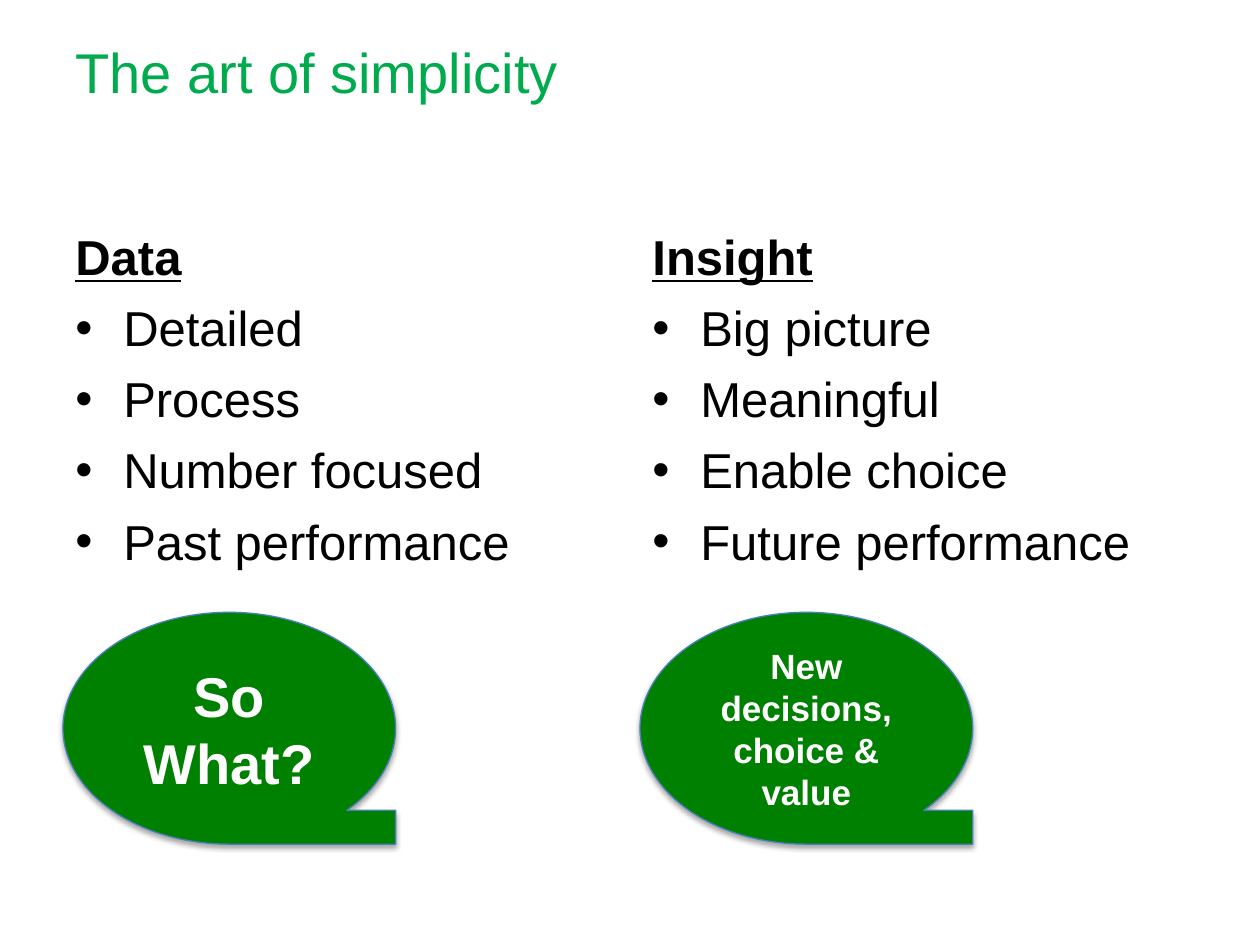
from lxml.etree import SubElement
from pptx import Presentation
from pptx.dml.color import RGBColor
from pptx.enum.shapes import MSO_SHAPE
from pptx.enum.text import MSO_ANCHOR, PP_ALIGN
from pptx.oxml.ns import qn
from pptx.util import Inches, Pt

COLORS = {
    "title": "00AB4E",
    "text": "000000",
    "callout": "008000",
    "outline": "4B7EBC",
    "callout_text": "FFFFFF",
    "shadow": "000000",
}
COLUMNS = [
    (0.5, "Data", ["Detailed", "Process", "Number focused", "Past performance"],
     "So What?", 32),
    (5.08, "Insight", ["Big picture", "Meaningful", "Enable choice", "Future performance"],
     "New decisions, choice & value", 20),
]


def color(name):
    return RGBColor.from_string(COLORS[name])


def style_text(para, size, color_name, bold=False, underline=False):
    for span in para.runs:
        font = span.font
        font.name = "Arial"
        font.size = Pt(size)
        font.bold = bold
        font.underline = underline
        font.color.rgb = color(color_name)


def add_bullet(para):
    properties = para._p.get_or_add_pPr()
    properties.set("marL", str(Inches(0.38)))
    properties.set("indent", str(Inches(-0.38)))
    SubElement(properties, qn("a:buFont"), typeface="Arial")
    SubElement(properties, qn("a:buChar"), char="•")


def add_soft_shadow(shape):
    """Give the shape a blurred shadow that falls straight down."""
    shape.shadow.inherit = False
    effects = shape._element.spPr.find(qn("a:effectLst"))
    shadow = SubElement(effects, qn("a:outerShdw"), blurRad=str(Pt(3.1)),
                        dist=str(Pt(1.8)), dir="5400000", rotWithShape="0")
    tint = SubElement(shadow, qn("a:srgbClr"), val=COLORS["shadow"])
    SubElement(tint, qn("a:alpha"), val="35000")


def set_title(page, text):
    title = page.shapes.title
    title.left, title.top = Inches(0.5), Inches(0.25)
    title.width, title.height = Inches(9), Inches(1.25)
    frame = title.text_frame
    frame.text = text
    frame.vertical_anchor = MSO_ANCHOR.TOP
    para = frame.paragraphs[0]
    para.alignment = PP_ALIGN.LEFT
    style_text(para, 32, "title")


def add_list(page, left, heading, items):
    box = page.shapes.add_textbox(Inches(left), Inches(1.75), Inches(4.42), Inches(4.95))
    frame = box.text_frame
    frame.word_wrap = True
    frame.text = heading
    style_text(frame.paragraphs[0], 28, "text", bold=True, underline=True)
    for item in items:
        para = frame.add_paragraph()
        para.text = item
        add_bullet(para)
        para.space_before = Pt(7)
        style_text(para, 28, "text")


def add_callout(page, left, text, size):
    callout = page.shapes.add_shape(MSO_SHAPE.FLOWCHART_SEQUENTIAL_ACCESS_STORAGE,
                                    Inches(left), Inches(4.86), Inches(2.64), Inches(1.84))
    callout.fill.solid()
    callout.fill.fore_color.rgb = color("callout")
    callout.line.color.rgb = color("outline")
    callout.line.width = Pt(0.75)
    add_soft_shadow(callout)
    frame = callout.text_frame
    frame.word_wrap = True
    frame.vertical_anchor = MSO_ANCHOR.MIDDLE
    frame.text = text
    para = frame.paragraphs[0]
    para.alignment = PP_ALIGN.CENTER
    style_text(para, size, "callout_text", bold=True)


def main():
    deck = Presentation()
    deck.slide_width, deck.slide_height = Inches(10), Inches(7.5)
    page = deck.slides.add_slide(deck.slide_layouts[5])
    set_title(page, "The art of simplicity")
    for left, heading, items, conclusion, size in COLUMNS:
        add_list(page, left, heading, items)
        add_callout(page, left, conclusion, size)
    deck.save("out.pptx")


if __name__ == "__main__":
    main()
